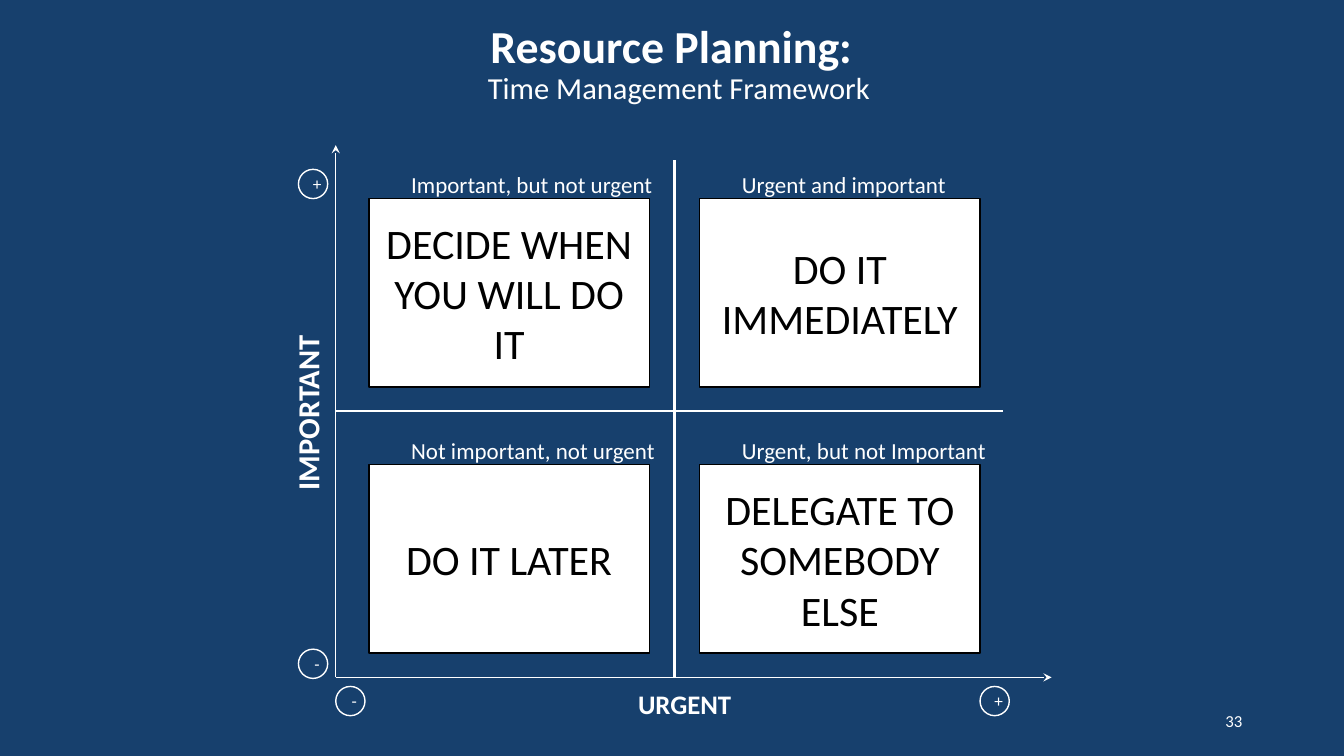
from dataclasses import dataclass

from lxml import etree
from pptx import Presentation
from pptx import util as u
from pptx.dml.color import RGBColor
from pptx.enum import shapes, text
from pptx.oxml.ns import qn

# Content
TITLE = "Resource Planning:"
SUBTITLE = "Time Management Framework"
PAGE_NUMBER = "33"
QUADRANTS = [  # rows from top to bottom, columns from left to right
    [("Important, but not urgent", "DECIDE WHEN YOU WILL DO IT"),
     ("Urgent and important", "DO IT IMMEDIATELY")],
    [("Not important, not urgent", "DO IT LATER"),
     ("Urgent, but not Important", "DELEGATE TO SOMEBODY ELSE")],
]


@dataclass(frozen=True)
class Theme:
    font: str = "Calibri"
    navy: RGBColor = RGBColor(0x17, 0x40, 0x6D)
    white: RGBColor = RGBColor(0xFF, 0xFF, 0xFF)
    black: RGBColor = RGBColor(0, 0, 0)
    title: float = 32.7
    subtitle: float = 21.8
    action: float = 30
    caption: float = 16.4
    urgent: float = 19.1
    important: float = 21.8
    sign: float = 12.3
    number: float = 12


THEME = Theme()
PX = 9144  # EMU; 100 px to the inch

# Matrix geometry, px
AXIS_X, AXIS_Y = 333, 672
AXIS_TOP, AXIS_RIGHT = 144, 1043
MIDDLE_X, MIDDLE_Y = 669, 408
BOX_W, BOX_H = 278, 187
COLUMNS, ROWS = (366, 694), (197, 461)
CAPTION_DX, CAPTION_DY = 32, -33
CAPTION_W, CAPTION_H = 264, 38
SIGN = 29

deck = Presentation()
deck.slide_width, deck.slide_height = 1333 * PX, 750 * PX
page = deck.slides.add_slide(deck.slide_layouts[5])
page.background.fill.solid()
page.background.fill.fore_color.rgb = THEME.navy


def scaled(*lengths):
    return [length * PX for length in lengths]


def write(shape, words, size, color=THEME.white, bold=False,
          align=text.PP_ALIGN.LEFT, anchor=text.MSO_ANCHOR.TOP, wrap=False):
    frame = shape.text_frame
    frame.text = words
    frame.word_wrap = wrap
    frame.auto_size = text.MSO_AUTO_SIZE.NONE
    frame.vertical_anchor = anchor
    para = frame.paragraphs[0]
    para.alignment = align
    para.font.name, para.font.size = THEME.font, u.Pt(size)
    para.font.bold, para.font.color.rgb = bold, color


def add_label(place, words, size, **style):
    label = page.shapes.add_textbox(*scaled(*place))
    write(label, words, size, **style)
    return label


def add_line(start, end, width, arrow=False):
    line = page.shapes.add_connector(
        shapes.MSO_CONNECTOR.STRAIGHT, *scaled(*start, *end))
    line.line.color.rgb = THEME.white
    line.line.width = u.Pt(width)
    if arrow:
        stroke = line.line._get_or_add_ln()
        etree.SubElement(stroke, qn("a:tailEnd"), type="stealth")
    etree.SubElement(line._element.spPr, qn("a:effectLst"))


def add_sign(left, top, words):
    circle = page.shapes.add_shape(
        shapes.MSO_SHAPE.OVAL, *scaled(left, top, SIGN, SIGN))
    circle.shadow.inherit = False
    circle.fill.background()
    circle.line.color.rgb = THEME.white
    circle.line.width = u.Pt(1)
    write(circle, words, THEME.sign, align=text.PP_ALIGN.CENTER,
          anchor=text.MSO_ANCHOR.MIDDLE)
    frame = circle.text_frame
    frame.margin_left, frame.margin_right = scaled(8, 0)


# Heading
heading = page.shapes.title
heading.left, heading.top, heading.width, heading.height = scaled(475, 13, 382, 65)
write(heading, TITLE, THEME.title, bold=True, align=text.PP_ALIGN.CENTER)
add_label((474, 64, 403, 47), SUBTITLE, THEME.subtitle)

# Dividers and axes
add_line((MIDDLE_X, 159), (MIDDLE_X, AXIS_Y), 1.5)
add_line((AXIS_X, MIDDLE_Y), (995, MIDDLE_Y), 1.5)
add_line((AXIS_X, AXIS_Y), (AXIS_RIGHT, AXIS_Y), 1, arrow=True)
add_line((AXIS_X, AXIS_Y), (AXIS_X, AXIS_TOP), 1, arrow=True)

# Quadrants
for top, row in zip(ROWS, QUADRANTS):
    for left, (caption, action) in zip(COLUMNS, row):
        box = page.shapes.add_shape(
            shapes.MSO_SHAPE.RECTANGLE, *scaled(left, top, BOX_W, BOX_H))
        box.shadow.inherit = False
        box.fill.solid()
        box.fill.fore_color.rgb = THEME.white
        box.line.color.rgb = THEME.black
        box.line.width = u.Pt(1)
        write(box, action, THEME.action, color=THEME.black, wrap=True,
              align=text.PP_ALIGN.CENTER, anchor=text.MSO_ANCHOR.MIDDLE)
        add_label((left + CAPTION_DX, top + CAPTION_DY, CAPTION_W, CAPTION_H),
                  caption, THEME.caption, wrap=True)

# Axis names and signs
add_label((623, 677, 114, 42), "URGENT", THEME.urgent, bold=True)
important = add_label((217, 385, 176, 47), "IMPORTANT", THEME.important, bold=True)
important.rotation = 270
for left, top, words in [(296, 168, "+"), (972, 681, "+"),
                         (296, 644, "-"), (AXIS_X, 681, "-")]:
    add_sign(left, top, words)

# Page number
add_label((942, 695, 300, 40), PAGE_NUMBER, THEME.number, wrap=True,
          align=text.PP_ALIGN.RIGHT, anchor=text.MSO_ANCHOR.MIDDLE)

deck.save("out.pptx")
